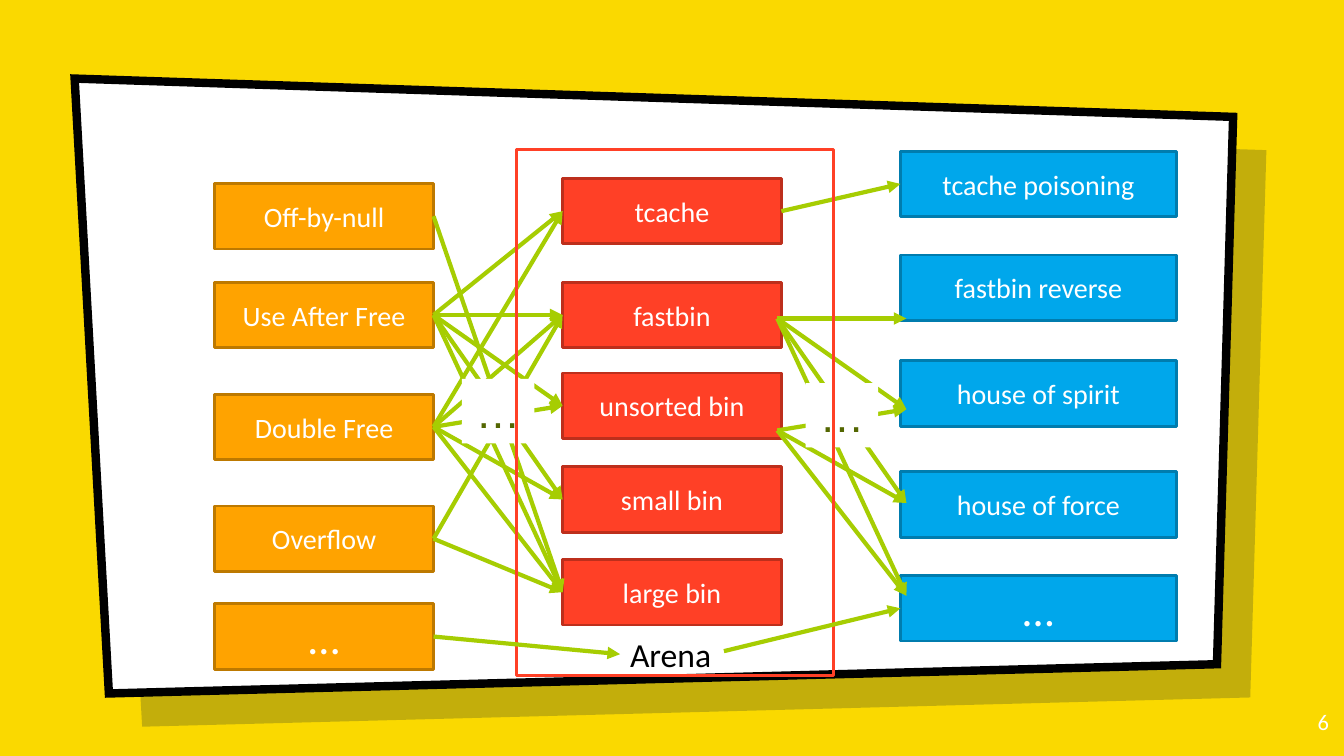
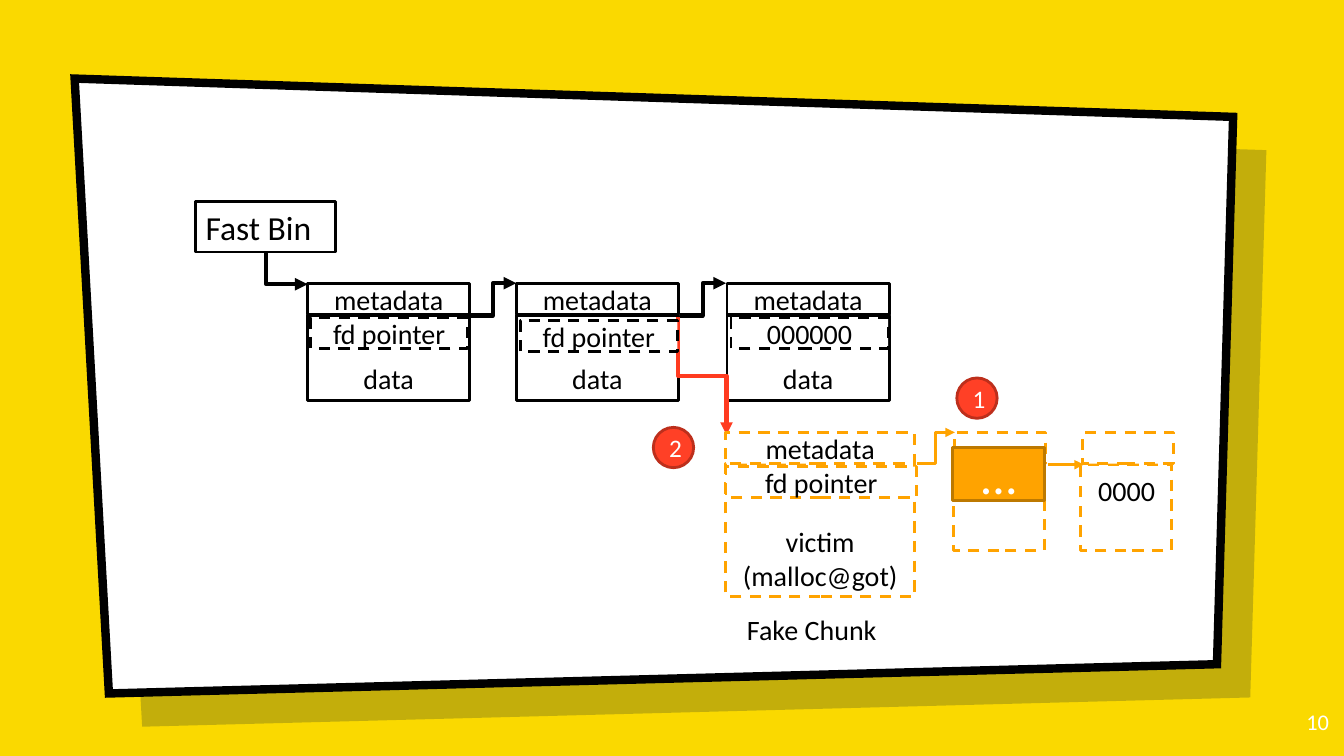
"""Build two slides on heap exploitation: bug-to-attack map and fastbin fake chunk."""
from pptx import Presentation
from pptx.dml.color import RGBColor
from pptx.enum.dml import MSO_LINE
from pptx.enum.shapes import MSO_CONNECTOR, MSO_SHAPE
from pptx.enum.text import MSO_ANCHOR, PP_ALIGN
from pptx.oxml.ns import qn
from pptx.util import Inches, Pt
from lxml import etree

RECT, OVAL = MSO_SHAPE.RECTANGLE, MSO_SHAPE.OVAL
STRAIGHT, ELBOW = MSO_CONNECTOR.STRAIGHT, MSO_CONNECTOR.ELBOW
TOP, MIDDLE, BOTTOM = MSO_ANCHOR.TOP, MSO_ANCHOR.MIDDLE, MSO_ANCHOR.BOTTOM
LEFT, CENTER, RIGHT = PP_ALIGN.LEFT, PP_ALIGN.CENTER, PP_ALIGN.RIGHT
DASH = MSO_LINE.DASH
YELLOW, WHITE, BLACK, NAVY = "FAD900", "FFFFFF", "000000", "001936"
ORANGE, BROWN, RED, MAROON = "FFA300", "BD7900", "FF4026", "BD2F1C"
BLUE, TEAL, GREEN, OLIVE = "00A7EB", "007CAE", "A6CD02", "536601"
SCARLET = "FF3B20"
rgb = RGBColor.from_string


def box(slide, text, place, fill=None, line=None, color=BLACK, size=20, kind=RECT,
        anchor=MIDDLE, align=CENTER, dash=None, wrap=True, font="Calibri"):
    """Add a shape with styled text; place is left, top, width, height in inches."""
    shape = slide.shapes.add_shape(kind, *map(Inches, place))
    shape.shadow.inherit = False
    if fill:
        shape.fill.solid()
        shape.fill.fore_color.rgb = rgb(fill)
    else:
        shape.fill.background()
    if line:
        shape.line.color.rgb = rgb(line)
        shape.line.width = Pt(2)
        shape.line.dash_style = dash
    else:
        shape.line.fill.background()
    frame = shape.text_frame
    frame.word_wrap = wrap
    frame.vertical_anchor = anchor
    frame.text = text
    for para in frame.paragraphs:
        para.alignment = align
        for run in para.runs:
            run.font.name = font
            run.font.size = Pt(size)
            run.font.color.rgb = rgb(color)
    return shape


def link(slide, start, end, color=GREEN, width=3, kind=STRAIGHT):
    """Add an arrow between two points given in inches."""
    arrow = slide.shapes.add_connector(kind, *map(Inches, start + end))
    arrow.line.color.rgb = rgb(color)
    arrow.line.width = Pt(width)
    etree.SubElement(arrow.line._get_or_add_ln(), qn("a:tailEnd"), type="triangle")
    etree.SubElement(arrow.element.spPr, qn("a:effectLst"))
    return arrow


prs = Presentation()
prs.slide_width, prs.slide_height = Inches(13.33), Inches(7.5)
blank = prs.slide_layouts[6]
blank.background.fill.solid()
blank.background.fill.fore_color.rgb = rgb(YELLOW)
bugs, heap = [prs.slides.add_slide(blank) for _ in range(2)]

for shift, fill in ((0.33, NAVY), (0, WHITE)):
    outline = [(Inches(x + shift), Inches(y + shift))
               for x, y in ((0.74, 0.78), (12.23, 1.16), (12.07, 6.59), (1.08, 6.88))]
    pen = bugs.shapes.build_freeform(*outline[0])
    pen.add_line_segments(outline[1:], close=True)
    panel = pen.convert_to_shape()
    panel.shadow.inherit = False
    panel.fill.solid()
    panel.fill.fore_color.rgb = rgb(fill)
    if fill == NAVY:
        panel.line.fill.background()
        tint = panel.element.spPr.find(".//" + qn("a:srgbClr"))
        etree.SubElement(tint, qn("a:alpha"), val="22000")
    else:
        panel.line.color.rgb = rgb(BLACK)
        panel.line.width = Pt(6)
        etree.SubElement(panel.line._get_or_add_ln(), qn("a:miter"), lim="800000")
    blank.shapes.element.append(panel.element)

for slide, number in ((bugs, "6"), (heap, "10")):
    label = box(slide, number, (12.48, 6.93, 0.8, 0.57), color=WHITE, size=16,
                anchor=TOP, align=RIGHT)
    label.text_frame.margin_top = label.text_frame.margin_bottom = Inches(0.1)

columns = []
for left, width, fill, line, rows in (
    (2.13, 2.17, ORANGE, BROWN, (("Off-by-null", 1.82), ("Use After Free", 2.8),
                                 ("Double Free", 3.91), ("Overflow", 5.02), ("…", 5.99))),
    (5.58, 2.17, RED, MAROON, (("tcache", 1.77), ("fastbin", 2.8), ("unsorted bin", 3.7),
                               ("small bin", 4.63), ("large bin", 5.55))),
    (8.93, 2.74, BLUE, TEAL, (("tcache poisoning", 1.5), ("fastbin reverse", 2.53),
                              ("house of spirit", 3.58), ("house of force", 4.68),
                              ("…", 5.71))),
):
    columns.append([box(bugs, text, (left, top, width, 0.65), fill, line, WHITE,
                        32 if text == "…" else 20) for text, top in rows])
flaws, bins, attacks = columns

pairs = [(flaws[row], bins[goal]) for row, goals in
         enumerate(((4,), range(5), range(5), (1, 4))) for goal in goals]
for source, target in pairs + [(bins[0], attacks[0])]:
    arrow = link(bugs, (0, 0), (1, 1))
    arrow.begin_connect(source, 3)
    arrow.end_connect(target, 1)
for top, ends in ((3.16, (3.16, 4.06, 4.99, 5.91)), (4.27, (4.06, 4.99, 5.91))):
    for end in ends:
        link(bugs, (7.71, top), (8.99, end))
for left, top in ((4.58, 3.76), (7.99, 3.8)):
    box(bugs, "…", (left, top, 0.72, 0.64), WHITE, color=OLIVE, size=32, anchor=TOP,
        font="Arial")

box(bugs, "", (5.12, 1.48, 3.15, 5.22), line=RED)
arena = box(bugs, "Arena", (6.15, 6.24, 1.09, 0.5), size=24, anchor=TOP, align=LEFT,
            wrap=False)
arrow = link(bugs, (4.3, 6.32), (6.15, 6.49))
arrow.begin_connect(flaws[4], 3)
arrow.end_connect(arena, 1)
link(bugs, (7.18, 6.46), (8.93, 6.03)).end_connect(attacks[4], 1)

entry = link(heap, (3, 2.46), (2.69, 2.87), BLACK, kind=ELBOW)
entry.element.spPr.find(qn("a:prstGeom")).set("prst", "bentConnector2")
for left in (3.05, 5.12, 7.21):
    box(heap, "data", (left, 3.13, 1.61, 0.84), WHITE, BLACK, anchor=BOTTOM)
    box(heap, "metadata", (left, 2.81, 1.61, 0.31), WHITE, BLACK)
box(heap, "Fast Bin", (1.94, 2, 1.39, 0.5), WHITE, BLACK, size=24, anchor=TOP,
    align=LEFT, wrap=False)
for left in (4.66, 6.74):
    link(heap, (left, 3.13), (left + 0.46, 2.81), BLACK, kind=ELBOW)
hijack = link(heap, (7.55, 3.49), (6.38, 3.97), SCARLET, kind=ELBOW)
for arrow in (entry, hijack):
    arrow.element.spPr.find(qn("a:xfrm")).set("rot", "16200000")
for text, left, top in (("fd pointer", 3.08, 3.15), ("fd pointer", 5.16, 3.18),
                        ("000000", 7.25, 3.15)):
    box(heap, text, (left, top, 1.56, 0.31), WHITE, BLACK, dash=DASH)

for text, place, anchor in (
    ("", (10.72, 4.61, 0.9, 0.85), MIDDLE),
    ("", (10.74, 4.29, 0.9, 0.31), MIDDLE),
    ("victim\n(malloc@got)", (7.2, 4.6, 1.87, 1.32), BOTTOM),
    ("metadata", (7.2, 4.29, 1.87, 0.31), MIDDLE),
    ("", (9.46, 4.61, 0.9, 0.85), MIDDLE),
    ("", (9.47, 4.29, 0.9, 0.31), MIDDLE),
):
    box(heap, text, place, WHITE, ORANGE, anchor=anchor, dash=DASH)
box(heap, "Fake Chunk", (7.31, 6.03, 1.65, 0.44), anchor=TOP, align=LEFT, wrap=False)
box(heap, "0000", (10.51, 4.6, 1.33, 0.53))
link(heap, (10.39, 4.61), (10.75, 4.61), ORANGE, 2.25)
link(heap, (9.09, 4.6), (9.47, 4.29), ORANGE, 2.25, ELBOW)
box(heap, "…", (9.45, 4.44, 0.91, 0.53), ORANGE, BROWN, WHITE, 36)
box(heap, "fd pointer", (7.2, 4.63, 1.89, 0.31), WHITE, ORANGE, dash=DASH)
for text, left, top in (("1", 9.49, 3.75), ("2", 6.48, 4.24)):
    box(heap, text, (left, top, 0.4, 0.4), RED, MAROON, WHITE, 18, OVAL)

prs.save("out.pptx")
